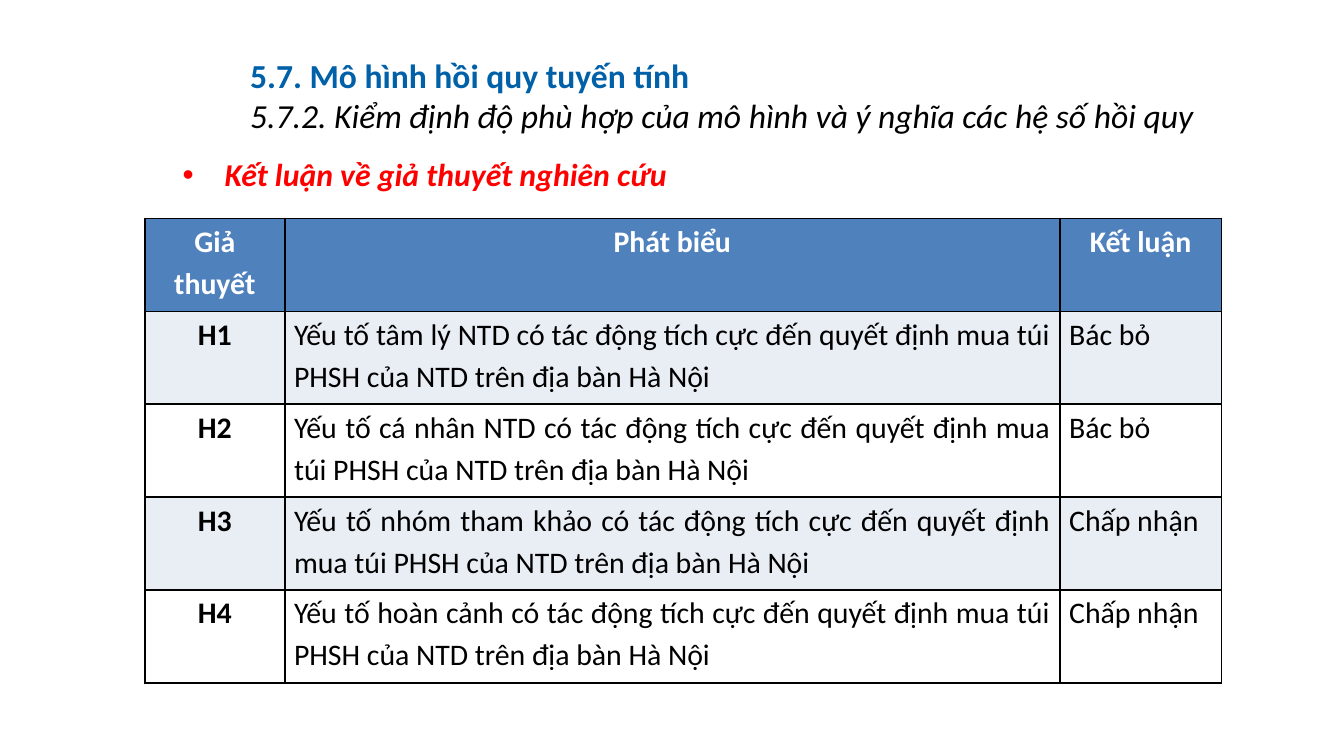
from lxml.etree import SubElement
from pptx import Presentation
from pptx.dml.color import RGBColor
from pptx.enum.text import MSO_ANCHOR as Anchor, MSO_AUTO_SIZE as AutoSize, PP_ALIGN as Align
from pptx.oxml.ns import qn
from pptx.util import Pt

BLUE, RED, BLACK, WHITE, PALE = "0060A8", "FF0000", "000000", "FFFFFF", "E9EDF4"
HEADER_FILL = "4F81BD"
HEADERS = ("Giả thuyết", "Phát biểu", "Kết luận")
STATEMENT = "Yếu tố {} có tác động tích cực đến quyết định mua túi PHSH của NTD trên địa bàn Hà Nội"
HYPOTHESES = (
    ("H1", "tâm lý NTD", "Bác bỏ"),
    ("H2", "cá nhân NTD", "Bác bỏ"),
    ("H3", "nhóm tham khảo", "Chấp nhận"),
    ("H4", "hoàn cảnh", "Chấp nhận"),
)


def rgb(color):
    """Turn a hex string into a colour."""
    return RGBColor.from_string(color)


def write(p, text, size=16, color=BLACK, bold=False, italic=False, align=Align.LEFT, spacing=None):
    """Add a formatted run to a paragraph."""
    p.alignment = align
    if spacing:
        p.line_spacing = spacing
    r = p.add_run()
    r.text = text
    font = r.font
    font.name, font.size, font.bold, font.italic = "Calibri", Pt(size), bold, italic
    font.color.rgb = rgb(color)


def add_title(slide, left, top, width, height):
    """Place the section heading and its subheading in the title."""
    s = slide.shapes.title
    s.left, s.top, s.width, s.height = Pt(left), Pt(top), Pt(width), Pt(height)
    tf = s.text_frame
    tf.word_wrap, tf.auto_size, tf.vertical_anchor = True, AutoSize.NONE, Anchor.MIDDLE
    p = tf.paragraphs[0]
    write(p, "5.7. Mô hình hồi quy tuyến tính", size=18, color=BLUE, bold=True)
    p.add_line_break()
    write(p, "5.7.2. Kiểm định độ phù hợp của mô hình và ý nghĩa các hệ số hồi quy", size=18, italic=True)


def add_bullet(slide, left, top, width, height):
    """Place the bulleted lead-in above the table."""
    tf = slide.shapes.add_textbox(Pt(left), Pt(top), Pt(width), Pt(height)).text_frame
    tf.word_wrap, tf.auto_size = True, AutoSize.SHAPE_TO_FIT_TEXT
    p = tf.paragraphs[0]
    pPr = p._p.get_or_add_pPr()
    pPr.set("marL", str(Pt(22.5)))
    pPr.set("indent", str(Pt(-22.5)))
    SubElement(pPr, qn("a:buFont"), typeface="Arial")
    SubElement(pPr, qn("a:buChar"), char="•")
    write(p, "Kết luận về giả thuyết nghiên cứu", size=17, color=RED, bold=True, italic=True)


def add_borders(cell):
    """Draw a thin black line on each side of a cell."""
    tcPr = cell._tc.get_or_add_tcPr()
    for i, side in enumerate(("lnL", "lnR", "lnT", "lnB")):
        ln = tcPr.makeelement(qn(f"a:{side}"), {"w": str(Pt(1))})
        SubElement(SubElement(ln, qn("a:solidFill")), qn("a:srgbClr"), val=BLACK)
        tcPr.insert(i, ln)


def fill_cell(cell, text, fill, **fmt):
    """Set the text, margins, fill and borders of a cell."""
    cell.margin_left = cell.margin_right = Pt(5)
    cell.margin_top = cell.margin_bottom = 0
    cell.fill.solid()
    cell.fill.fore_color.rgb = rgb(fill)
    write(cell.text_frame.paragraphs[0], text, spacing=1.15, **fmt)
    add_borders(cell)


def add_hypotheses(slide, left, top, width, height):
    """Place the table of hypotheses and conclusions."""
    rows = [HEADERS] + [(code, STATEMENT.format(factor), result) for code, factor, result in HYPOTHESES]
    table = slide.shapes.add_table(len(rows), len(HEADERS), Pt(left), Pt(top), Pt(width), Pt(height)).table
    for column, share in zip(table.columns, (0.13, 0.72, 0.15)):
        column.width = Pt(width * share)
    for i, row in enumerate(rows):
        table.rows[i].height = Pt(height / len(rows))
        for j, text in enumerate(row):
            header = i == 0
            strong = header or j == 0
            fill = HEADER_FILL if header else PALE if i % 2 else WHITE
            fill_cell(table.cell(i, j), text, fill, color=WHITE if header else BLACK,
                      bold=strong, align=Align.CENTER if strong else Align.JUSTIFY)


def main():
    """Build the slide and save it."""
    prs = Presentation()
    prs.slide_width, prs.slide_height = Pt(720), Pt(405)
    slide = prs.slides.add_slide(prs.slide_layouts[5])
    add_hypotheses(slide, 77.6, 117, 576.7, 249)
    add_bullet(slide, 90.8, 79.5, 468, 28)
    add_title(slide, 126.8, 16.8, 524, 68)
    prs.save("out.pptx")


if __name__ == "__main__":
    main()
